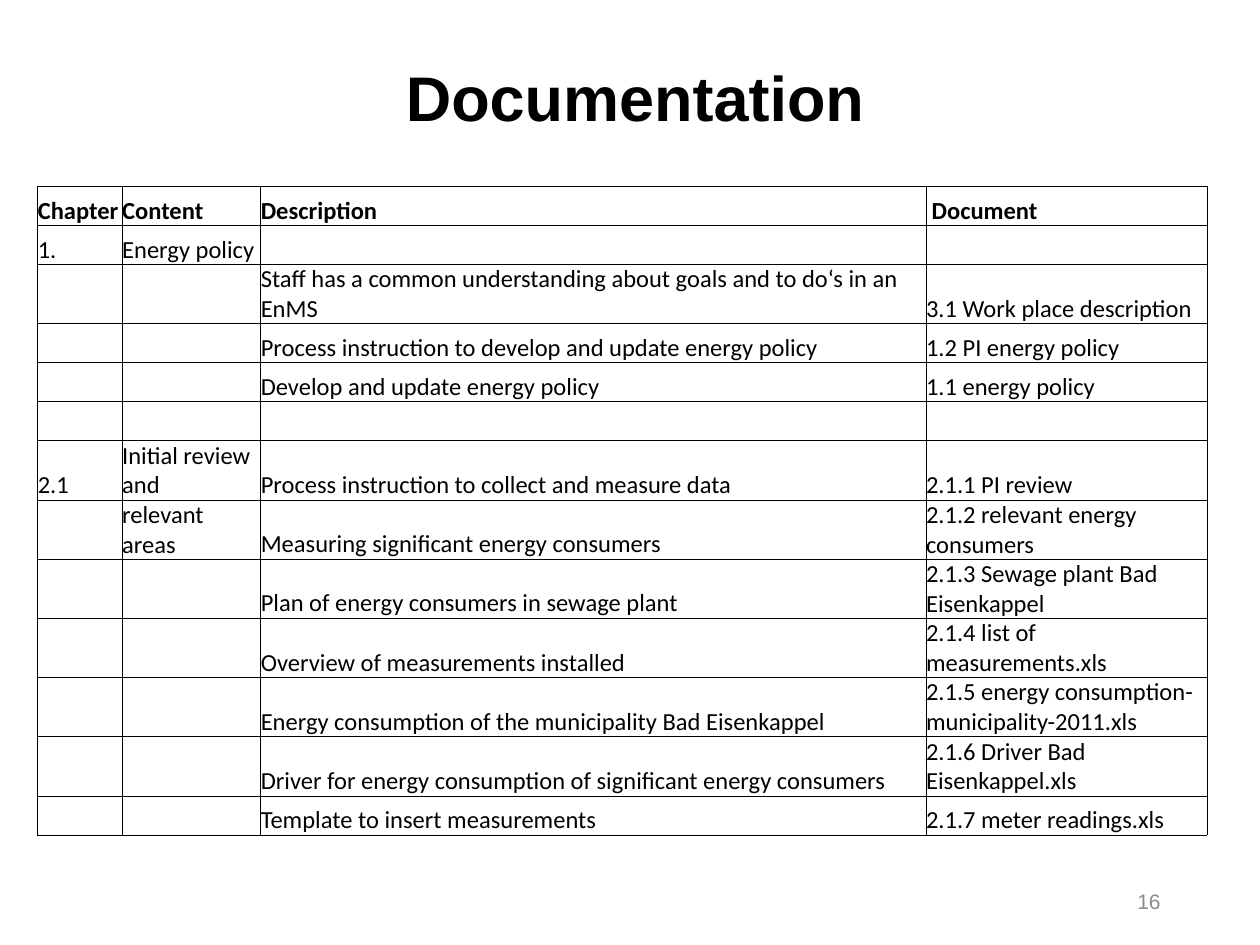
import pptx
import pptx.util
import pptx.dml.color
import pptx.enum.text
import pptx.oxml
import pptx.oxml.ns
from pptx.util import Inches

BLACK = pptx.dml.color.RGBColor(0x00, 0x00, 0x00)
GREY = pptx.dml.color.RGBColor(0x8C, 0x8C, 0x8C)
ALIGN = pptx.enum.text.PP_ALIGN
ANCHOR = pptx.enum.text.MSO_ANCHOR

TITLE_FORMAT = {"name": "Arial", "size": pptx.util.Pt(36), "bold": True}
NUMBER_FORMAT = {"name": "Arial", "size": pptx.util.Pt(12), "bold": False}
CELL_FORMAT = {"name": "Calibri", "size": pptx.util.Pt(14), "bold": False}
HEADER_FORMAT = {**CELL_FORMAT, "bold": True}
NO_MARGINS = dict.fromkeys(("margin_left", "margin_top", "margin_right", "margin_bottom"), 0)

COLUMN_WIDTHS = (0.67, 1.1, 5.28, 2.23)
SHORT_ROW, TALL_ROW = 0.31, 0.47
ROWS = (
    (SHORT_ROW, "Chapter", "Content", "Description", " Document"),
    (SHORT_ROW, "1.", "Energy policy", "", ""),
    (TALL_ROW, "", "", "Staff has a common understanding about goals and to do‘s in an EnMS",
     "3.1 Work place description"),
    (SHORT_ROW, "", "", "Process instruction to develop and update energy policy", "1.2 PI energy policy"),
    (SHORT_ROW, "", "", "Develop and update energy policy", "1.1 energy policy"),
    (SHORT_ROW, "", "", "", ""),
    (TALL_ROW, "2.1", "Initial review and", "Process instruction to collect and measure data", "2.1.1 PI review"),
    (TALL_ROW, "", "relevant areas", "Measuring significant energy consumers", "2.1.2 relevant energy consumers"),
    (TALL_ROW, "", "", "Plan of energy consumers in sewage plant", "2.1.3 Sewage plant Bad Eisenkappel"),
    (TALL_ROW, "", "", "Overview of measurements installed", "2.1.4 list of measurements.xls"),
    (TALL_ROW, "", "", "Energy consumption of the municipality Bad Eisenkappel",
     "2.1.5 energy consumption-municipality-2011.xls"),
    (TALL_ROW, "", "", "Driver for energy consumption of significant energy consumers",
     "2.1.6 Driver Bad Eisenkappel.xls"),
    (SHORT_ROW, "", "", "Template to insert measurements", "2.1.7 meter readings.xls"),
)


def set_values(target, values):
    """Set each named attribute of the target."""
    for name, value in values.items():
        setattr(target, name, value)


def add_span(para, text, font_format, color):
    """Add formatted text to a paragraph."""
    span = para.add_run()
    span.text = text
    set_values(span.font, font_format)
    span.font.color.rgb = color


def add_text(page, bounds, text, font_format, color, alignment, margins):
    """Add a vertically centred, wrapping text box."""
    box = page.shapes.add_textbox(*map(Inches, bounds))
    frame_format = {"word_wrap": True, "vertical_anchor": ANCHOR.MIDDLE, **margins}
    set_values(box.text_frame, frame_format)
    para = box.text_frame.paragraphs[0]
    para.alignment = alignment
    add_span(para, text, font_format, color)


def add_borders(cell):
    """Draw a thin black line on every side of a cell."""
    properties = cell._tc.get_or_add_tcPr()
    for position, side in enumerate(("lnL", "lnR", "lnT", "lnB")):
        line = pptx.oxml.parse_xml(
            f'<a:{side} {pptx.oxml.ns.nsdecls("a")} w="{pptx.util.Pt(0.5)}">'
            f'<a:solidFill><a:srgbClr val="{BLACK}"/></a:solidFill></a:{side}>'
        )
        properties.insert(position, line)


def fill_cell(cell, text, font_format):
    """Write and style one table cell."""
    set_values(cell, {**NO_MARGINS, "vertical_anchor": ANCHOR.BOTTOM})
    cell.fill.background()
    add_borders(cell)
    if text:
        add_span(cell.text_frame.paragraphs[0], text, font_format, BLACK)


def add_document_table(page):
    """Add the table of chapters and their documents."""
    height = sum(row[0] for row in ROWS)
    bounds = (0.3, 1.48, sum(COLUMN_WIDTHS), height)
    table = page.shapes.add_table(len(ROWS), len(COLUMN_WIDTHS), *map(Inches, bounds)).table
    set_values(table, {"first_row": False, "horz_banding": False})
    for column, width in zip(table.columns, COLUMN_WIDTHS):
        column.width = Inches(width)
    for index, (row, (row_height, *texts)) in enumerate(zip(table.rows, ROWS)):
        row.height = Inches(row_height)
        for cell, text in zip(row.cells, texts):
            fill_cell(cell, text, CELL_FORMAT if index else HEADER_FORMAT)


def main():
    """Build and save the documentation slide."""
    deck = pptx.Presentation()
    set_values(deck, {"slide_width": Inches(10), "slide_height": Inches(7.5)})
    page = deck.slides.add_slide(deck.slide_layouts[6])
    add_text(page, (0.5, 0.37, 9.08, 0.79), "Documentation", TITLE_FORMAT, BLACK, ALIGN.CENTER, NO_MARGINS)
    add_document_table(page)
    add_text(page, (7.06, 6.95, 2.25, 0.4), "16", NUMBER_FORMAT, GREY, ALIGN.RIGHT, {})
    deck.save("out.pptx")


if __name__ == "__main__":
    main()
